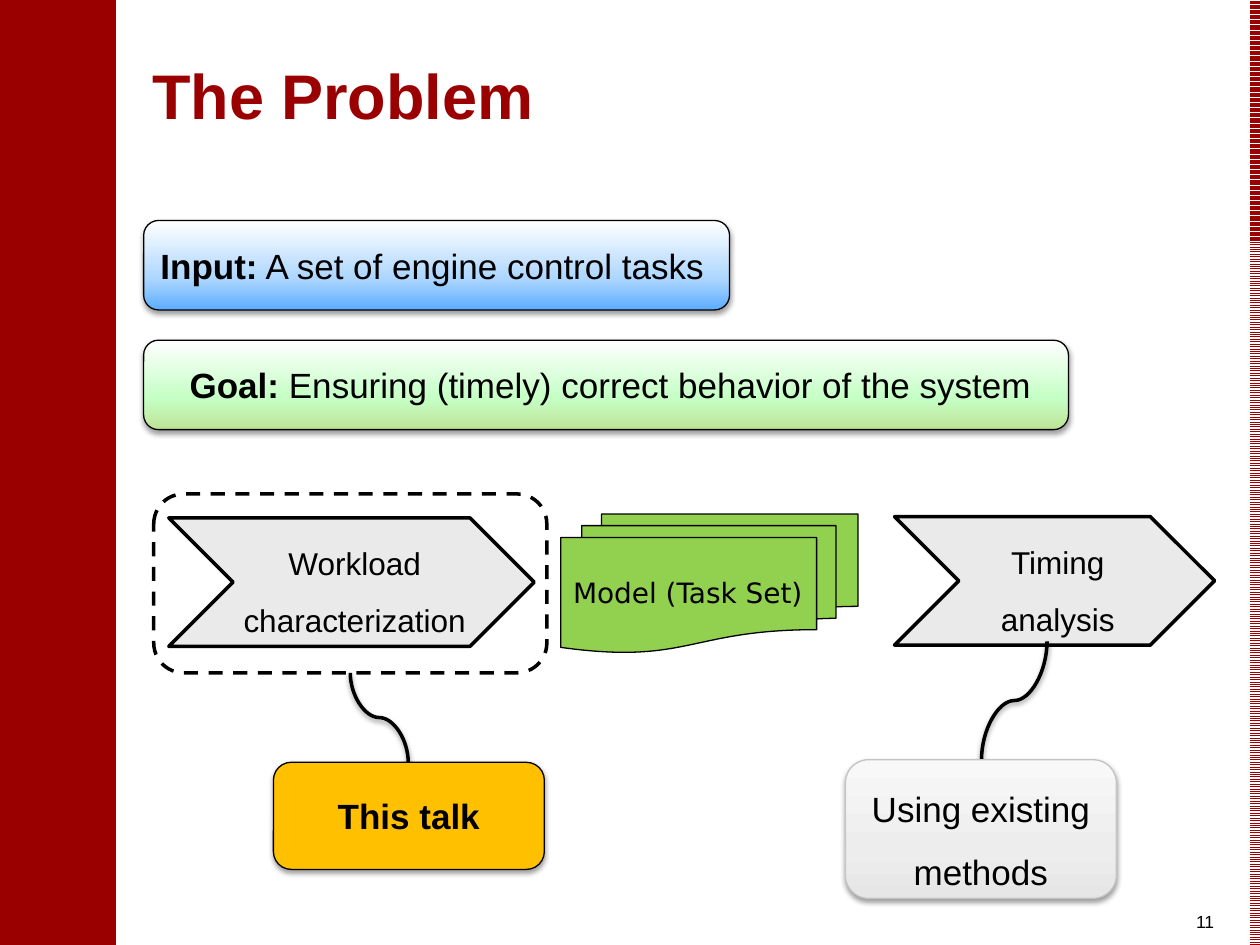
from lxml import etree
from pptx import Presentation
from pptx import util as u
from pptx.dml.color import RGBColor
from pptx.enum import dml, shapes, text
from pptx.oxml.ns import qn

RED = RGBColor(0x9A, 0x00, 0x00)
BLACK = RGBColor(0x00, 0x00, 0x00)
WHITE = RGBColor(0xFF, 0xFF, 0xFF)
PALE = RGBColor(0xEA, 0xEA, 0xEA)
SILVER = RGBColor(0xC4, 0xC4, 0xC4)
AMBER = RGBColor(0xFF, 0xC0, 0x00)
GREEN = RGBColor(0x92, 0xD0, 0x50)

# Gradient colours from bottom to top, at 0, 35 and 100 percent
BLUES = (RGBColor(0x5C, 0xAD, 0xFF), RGBColor(0xAD, 0xD6, 0xFF), WHITE)
GREENS = (RGBColor(0xBE, 0xE3, 0x96), RGBColor(0xC5, 0xFF, 0xC5), WHITE)
GREYS = (RGBColor(0xE6, 0xE6, 0xE6), RGBColor(0xED, 0xED, 0xED), RGBColor(0xF8, 0xF8, 0xF8))

KIND = shapes.MSO_SHAPE
ALIGN = text.PP_ALIGN
ANCHOR = text.MSO_ANCHOR
PATTERN = dml.MSO_PATTERN

# Content: boxes are left, top, width, height in inches
TITLE = "The Problem"
PAGE = "11"
STATEMENTS = [  # label, wording, box, left inset, gradient
    ("Goal:", " Ensuring (timely) correct behavior of the system", (1.14, 2.7, 7.34, 0.71), 0.33, GREENS),
    ("Input:", " A set of engine control tasks", (1.14, 1.75, 4.65, 0.71), 0.1, BLUES),
]
STEPS = [  # wording, chevron box
    ("Workload characterization", (1.34, 4.11, 2.9, 1.02)),
    ("Timing analysis", (7.1, 4.1, 2.54, 1.02)),
]
STEP_INSET = 0.51
CALLOUTS = [  # wording, box, fill, outline, bold, line spacing, link start, link end
    ("This talk", (2.17, 6.05, 2.15, 0.85), AMBER, BLACK, True, 1, (2.78, 5.34), (3.24, 6.05)),
    ("Using existing methods", (6.71, 6.03, 2.15, 1.1), GREYS, SILVER, False, 1.5, (8.31, 5.09), (7.79, 6.03)),
]
BANDS = [  # box, pattern
    ((9.92, 1.92, 0.08, 5.58), PATTERN.LIGHT_HORIZONTAL),
    ((9.92, 0, 0.08, 1.92), PATTERN.DARK_HORIZONTAL),
]

prs = Presentation()
prs.slide_width, prs.slide_height = u.Inches(10), u.Inches(7.5)
slide = prs.slides.add_slide(prs.slide_layouts[6])


def inches(values):
    return [u.Inches(v) for v in values]


def add_shadow(part):
    props = part._element.spPr
    effects = props.find(qn("a:effectLst"))
    if effects is None:
        effects = etree.SubElement(props, qn("a:effectLst"))
    shadow = etree.SubElement(effects, qn("a:outerShdw"), blurRad=str(u.Pt(3.1)),
                              dist=str(u.Pt(1.6)), dir="5400000", rotWithShape="0")
    colour = etree.SubElement(shadow, qn("a:srgbClr"), val=str(BLACK))
    etree.SubElement(colour, qn("a:alpha"), val="38000")


def set_gradient(fill, part, colours):
    fill.gradient()
    fill.gradient_angle = 90
    stops = part._element.spPr.find(".//" + qn("a:gsLst"))
    for stop in list(stops):
        stops.remove(stop)
    for position, colour in zip((0, 35, 100), colours):
        stop = etree.SubElement(stops, qn("a:gs"), pos=str(position * 1000))
        etree.SubElement(stop, qn("a:srgbClr"), val=str(colour))


def add_part(kind, box, fill=None, outline=None, weight=0.75, shadow=False):
    part = slide.shapes.add_shape(kind, *inches(box))
    if fill is None:
        part.fill.background()
    elif isinstance(fill, RGBColor):
        part.fill.solid()
        part.fill.fore_color.rgb = fill
    else:
        set_gradient(part.fill, part, fill)
    if outline is None:
        part.line.fill.background()
    else:
        part.line.color.rgb = outline
        part.line.width = u.Pt(weight)
    part.shadow.inherit = False
    if shadow:
        add_shadow(part)
    return part


def write(part, runs, size, align=ALIGN.CENTER, anchor=ANCHOR.MIDDLE, colour=BLACK,
          font="Arial", spacing=1, wrap=True, insets=(0.1, 0.05, 0.1, 0.05)):
    frame = part.text_frame
    frame.word_wrap = wrap
    frame.vertical_anchor = anchor
    (frame.margin_left, frame.margin_top,
     frame.margin_right, frame.margin_bottom) = inches(insets)
    paragraph = frame.paragraphs[0]
    paragraph.alignment = align
    paragraph.line_spacing = spacing
    for wording, bold in runs:
        run = paragraph.add_run()
        run.text = wording
        run.font.name, run.font.size, run.font.bold = font, u.Pt(size), bold
        run.font.color.rgb = colour


def add_link(start, end):
    """Curve that leaves and arrives vertically: a horizontal one, turned."""
    (x1, y1), (x2, y2) = start, end
    mid_x, mid_y = (x1 + x2) / 2, (y1 + y2) / 2
    half_w, half_h = abs(y2 - y1) / 2, abs(x2 - x1) / 2
    side = -1 if x2 < x1 else 1
    link = slide.shapes.add_connector(
        shapes.MSO_CONNECTOR.CURVE,
        *inches((mid_x + side * half_w, mid_y - half_h, mid_x - side * half_w, mid_y + half_h)))
    link._element.spPr.find(qn("a:xfrm")).set("rot", str((180 + side * 90) * 60000))
    link.line.color.rgb = BLACK
    link.line.width = u.Pt(2)
    add_shadow(link)


# Side bars and page number
add_part(KIND.RECTANGLE, (0, 0, 0.92, 7.5), RED)
for box, pattern in BANDS:
    band = add_part(KIND.RECTANGLE, box)
    band.fill.patterned()
    band.fill.pattern = pattern
    band.fill.fore_color.rgb = RED
    band.fill.back_color.rgb = WHITE
page = slide.shapes.add_textbox(*inches((9.33, 7.18, 0.47, 0.27)))
write(page, [(PAGE, False)], 10, anchor=ANCHOR.TOP)

# Process steps
for wording, (left, top, width, height) in STEPS:
    add_part(KIND.CHEVRON, (left, top, width, height), PALE, BLACK, 2)
    label = slide.shapes.add_textbox(
        *inches((left + STEP_INSET, top, width - 2 * STEP_INSET, height)))
    write(label, [(wording, False)], 18, spacing=1.5, insets=(0.08, 0.03, 0.03, 0.03))

# Dashed frame around the first step
frame = add_part(KIND.ROUNDED_RECTANGLE, (1.22, 3.92, 3.12, 1.42), None, BLACK, 2)
frame.line.dash_style = dml.MSO_LINE.DASH

# Callouts and their links
for wording, box, fill, outline, bold, spacing, start, end in CALLOUTS:
    add_link(start, end)
    callout = add_part(KIND.ROUNDED_RECTANGLE, box, fill, outline, shadow=True)
    write(callout, [(wording, bold)], 20, spacing=spacing)

# Title
title = slide.shapes.add_textbox(*inches((1.11, 0.39, 8.46, 0.71)))
write(title, [(TITLE, True)], 36, ALIGN.LEFT, ANCHOR.BOTTOM, RED)

# Input and goal
for label, wording, box, inset, gradient in STATEMENTS:
    statement = add_part(KIND.ROUNDED_RECTANGLE, box, gradient, BLACK, shadow=True)
    write(statement, [(label, True), (wording, False)], 20, ALIGN.LEFT,
          insets=(inset, 0.05, 0.1, 0.05))

# Model between the two steps
model = add_part(KIND.FLOWCHART_MULTIDOCUMENT, (4.45, 4.08, 2.36, 1.1), GREEN, BLACK)
write(model, [("Model (Task Set)", False)], 16, ALIGN.LEFT, font="DejaVu Sans", wrap=False)

prs.save("out.pptx")
